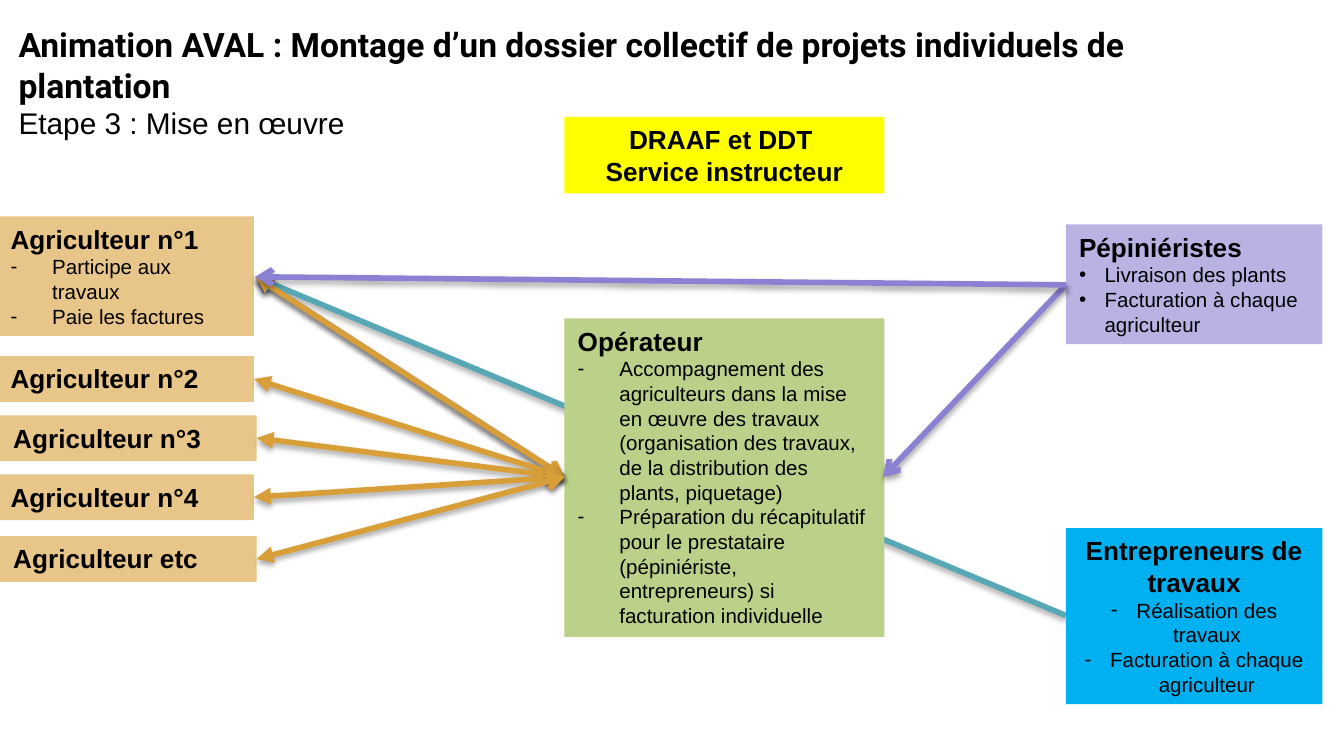
from dataclasses import dataclass

from lxml import etree
from pptx import Presentation
from pptx import util as u
from pptx.dml.color import RGBColor
from pptx.enum import shapes, text
from pptx.oxml import ns


@dataclass(frozen=True)
class Theme:
    black: str = "000000"
    tan: str = "E8C588"
    green: str = "BBD189"
    lilac: str = "B9B3E4"
    blue: str = "00B0F0"
    yellow: str = "FFFF00"
    purple_line: str = "8B81D2"
    teal_line: str = "57A7B5"
    orange_line: str = "D89F39"
    font: str = "Arial"
    title_font: str = "Roboto"
    title_size: int = 18
    subtitle_size: int = 16
    heading_size: int = 14
    body_size: int = 11
    line_width: int = 3


def add_xml(parent, tag, **attributes):
    return etree.SubElement(parent, ns.qn(tag), **attributes)


class SlideBuilder:
    def __init__(self, slide, theme):
        self.slide = slide
        self.theme = theme

    def style_font(self, font, size, bold=False, name=None):
        font.name = name or self.theme.font
        font.size = u.Pt(size)
        font.bold = bold
        font.color.rgb = RGBColor.from_string(self.theme.black)

    def title(self, left, top, width, height, heading, subtitle):
        theme = self.theme
        box = self.slide.shapes.add_textbox(*map(u.Inches, (left, top, width, height)))
        frame = box.text_frame
        frame.word_wrap = True
        frame.margin_left = frame.margin_right = u.Inches(0.1)
        frame.margin_top = frame.margin_bottom = u.Inches(0.1)
        paragraph = frame.paragraphs[0]
        run = paragraph.add_run()
        run.text = heading
        self.style_font(run.font, theme.title_size, True, theme.title_font)
        paragraph.add_line_break()
        run = paragraph.add_run()
        run.text = subtitle
        self.style_font(run.font, theme.subtitle_size)

    def bullet(self, paragraph, mark, indent):
        properties = paragraph._p.get_or_add_pPr()
        properties.set("marL", str(u.Inches(indent)))
        properties.set("indent", str(-u.Inches(indent)))
        add_xml(add_xml(properties, "a:buClr"), "a:srgbClr", val=self.theme.black)
        add_xml(properties, "a:buFont", typeface=self.theme.font)
        add_xml(properties, "a:buChar", char=mark)

    def card(self, left, top, width, height, fill, headings, items=(),
             mark="-", indent=0.31, centred=False):
        shape = self.slide.shapes.add_shape(
            shapes.MSO_SHAPE.RECTANGLE, *map(u.Inches, (left, top, width, height)))
        shape.shadow.inherit = False
        shape.fill.solid()
        shape.fill.fore_color.rgb = RGBColor.from_string(fill)
        shape.line.fill.background()
        frame = shape.text_frame
        frame.word_wrap = True
        frame.vertical_anchor = text.MSO_ANCHOR.TOP
        for index, line in enumerate([*headings, *items]):
            paragraph = frame.add_paragraph() if index else frame.paragraphs[0]
            paragraph.text = line
            paragraph.alignment = text.PP_ALIGN.CENTER if centred else text.PP_ALIGN.LEFT
            is_heading = index < len(headings)
            if not is_heading:
                self.bullet(paragraph, mark, indent)
            size = self.theme.heading_size if is_heading else self.theme.body_size
            self.style_font(paragraph.font, size, is_heading)

    def arrow(self, start, end, color, double=False):
        connector = self.slide.shapes.add_connector(
            shapes.MSO_CONNECTOR.STRAIGHT, *map(u.Inches, (*start, *end)))
        connector.line.color.rgb = RGBColor.from_string(color)
        connector.line.width = u.Pt(self.theme.line_width)
        line = connector.line._get_or_add_ln()
        if double:
            add_xml(line, "a:headEnd", type="triangle")
        add_xml(line, "a:tailEnd", type="arrow")
        effects = add_xml(connector._element.spPr, "a:effectLst")
        shadow = add_xml(effects, "a:outerShdw", blurRad=str(u.Pt(3.1)),
                         dist=str(u.Pt(1.8)), dir="5400000", rotWithShape="0")
        add_xml(add_xml(shadow, "a:srgbClr", val=self.theme.black), "a:alpha", val="35000")


def main():
    presentation = Presentation()
    presentation.slide_width = u.Inches(10)
    presentation.slide_height = u.Inches(10 * 9 / 16)
    theme = Theme()
    builder = SlideBuilder(
        presentation.slides.add_slide(presentation.slide_layouts[6]), theme)

    side_width, centre_width, row_height = 1.91, 2.38, 0.34
    centre_left, right_left = 4.2, 7.93
    first_farmer = (1.9, 2.06)
    operator_left, operator_right = (centre_left, 3.55), (6.57, 3.55)
    nursery = (right_left, 2.12)
    contractor = (right_left, 4.58)

    builder.arrow(operator_left, first_farmer, theme.purple_line)
    builder.arrow(contractor, first_farmer, theme.teal_line)
    builder.title(
        0.04, 0.08, 9.4, 0.5,
        "Animation AVAL : Montage d’un dossier collectif de projets individuels de plantation",
        "Etape 3 : Mise en œuvre")

    builder.card(-0.02, 1.61, side_width, 0.89, theme.tan, ["Agriculteur n°1"],
                 ["Participe aux travaux", "Paie les factures"])
    builder.card(
        centre_left, 2.37, centre_width, 2.37, theme.green, ["Opérateur"],
        ["Accompagnement des agriculteurs dans la mise en œuvre des travaux "
         "(organisation des travaux, de la distribution des plants, piquetage)",
         "Préparation du récapitulatif pour le prestataire "
         "(pépiniériste, entrepreneurs) si facturation individuelle"])

    farmers = [("n°2", -0.02, 2.65), ("n°3", 0, 3.09),
               ("n°4", -0.02, 3.53), ("etc", 0, 3.99)]
    for label, left, top in farmers:
        builder.card(left, top, side_width, row_height, theme.tan,
                     [f"Agriculteur {label}"])
    farmer_edges = [(left + side_width, top + row_height / 2)
                    for _, left, top in farmers]
    for edge in [first_farmer, *farmer_edges]:
        builder.arrow(edge, operator_left, theme.orange_line, double=True)

    builder.card(right_left, 1.67, side_width, 0.89, theme.lilac, ["Pépiniéristes"],
                 ["Livraison des plants", "Facturation à chaque agriculteur"],
                 mark="•", indent=0.19)
    builder.card(right_left, 3.93, side_width, 1.31, theme.blue,
                 ["Entrepreneurs de travaux"],
                 ["Réalisation des travaux", "Facturation à chaque agriculteur"],
                 indent=0.19, centred=True)
    builder.arrow(nursery, operator_right, theme.purple_line)
    builder.card(centre_left, 0.87, centre_width, 0.57, theme.yellow,
                 ["DRAAF et DDT ", "Service instructeur"], centred=True)
    builder.arrow(nursery, first_farmer, theme.purple_line)

    presentation.save("out.pptx")


if __name__ == "__main__":
    main()
